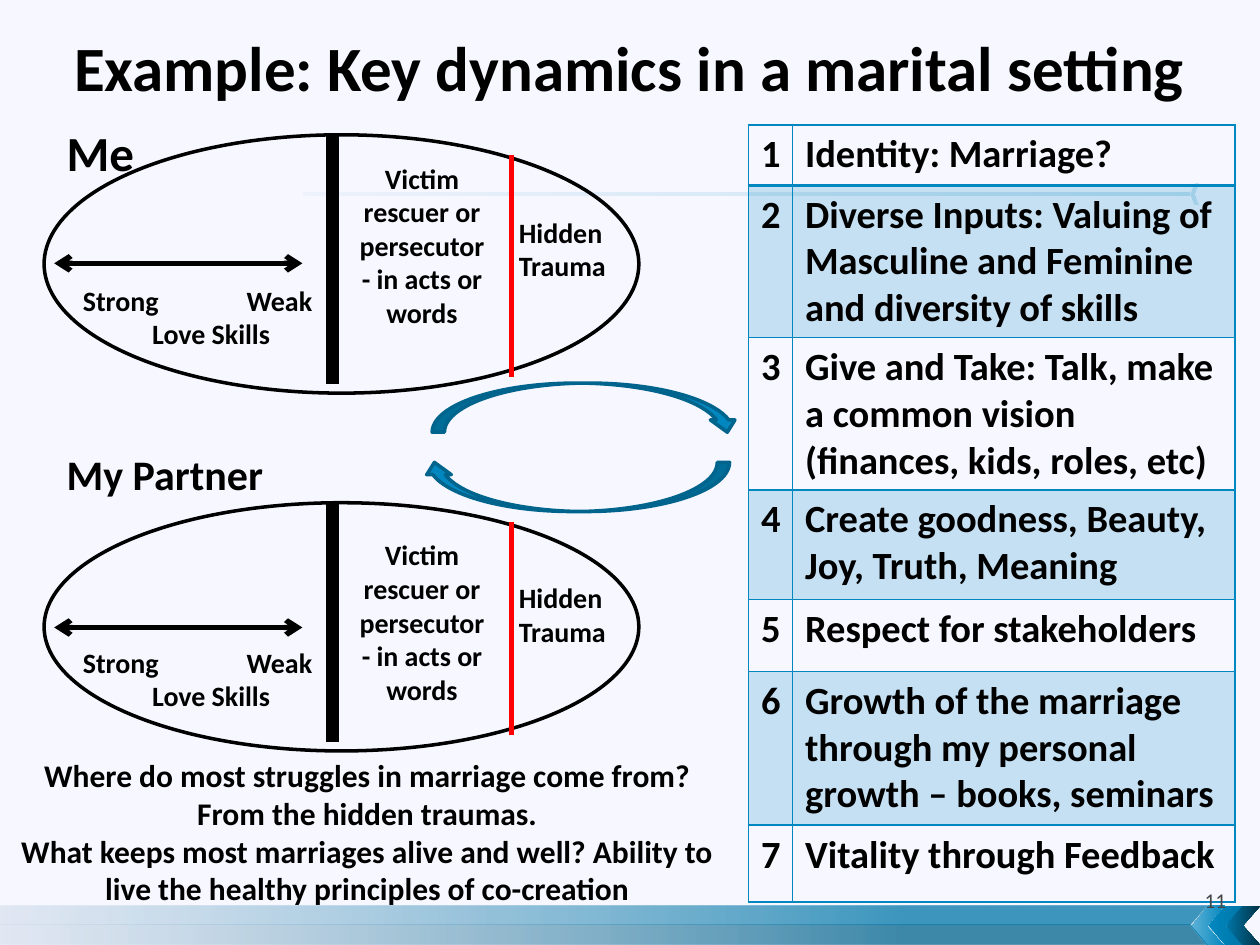
"""Build a slide on the key dynamics in a marital setting."""
from lxml.etree import SubElement
from pptx import Presentation
from pptx.dml.color import RGBColor
from pptx.enum.shapes import MSO_CONNECTOR, MSO_SHAPE
from pptx.enum.text import MSO_ANCHOR, PP_ALIGN
from pptx.oxml.ns import qn
from pptx.util import Inches, Pt

COLORS = {"bg": "F7F7FF", "text": "000000", "number": "454545", "blue": "0087BF",
          "mid": "0077A9", "deep": "00648D", "navy": "003246", "pale": "CCD9E8",
          "red": "FF0000"}
FONT = "Calibri"
TITLE = "Example: Key dynamics in a marital setting"
PRINCIPLES = [
    ("Identity: Marriage?", 0.48),
    ("Diverse Inputs: Valuing of Masculine and Feminine and diversity of skills", 1.21),
    ("Give and Take: Talk, make a common vision (finances, kids, roles, etc)", 1.21),
    ("Create goodness, Beauty, Joy, Truth, Meaning", 0.87),
    ("Respect for stakeholders", 0.57),
    ("Growth of the marriage through my personal growth – books, seminars", 1.22),
    ("Vitality through Feedback", 0.61),
]
TABLE_LEFT, TABLE_TOP, TABLE_COLS = 5.94, 0.99, (0.35, 3.51)
ROLES = ["Victim rescuer or persecutor", "- in acts or words"]
TRAUMA = ["Hidden Trauma"]
SKILLS = ["Strong\tWeak", "Love Skills"]
PEOPLE = [
    {"name": "Me", "size": 28, "label": (0.43, 0.92, 0.74, 0.57), "top": 1.07,
     "height": 2.05, "roles_top": 1.23},
    {"name": "My Partner", "size": 24, "label": (0.43, 3.51, 2.05, 0.5), "top": 3.99,
     "height": 1.97, "roles_top": 4.22},
]
QUESTIONS = [
    "Where do most struggles in marriage come from? From the hidden traumas.",
    "What keeps most marriages alive and well? Ability to live the healthy "
    "principles of co-creation",
]
EXCHANGE = [((3.35, 3.67, 2.44, 0.39), 180), ((3.43, 3.04, 2.44, 0.39), 0)]
FOOTER_BARS = [(7.5, "deep"), (7.19, "mid")]
FOOTER_MIDDLE = 7.34
CHEVRONS = [
    ((9.45, 7.19, 0.27, 0.31), [(0, "blue", 60), (100, "blue", 100)]),
    ((9.59, 7.19, 0.27, 0.31), [(0, "blue", 100), (100, "mid", 100)]),
    ((9.73, 7.19, 0.27, 0.31), [(0, "mid", 100), (100, "navy", 100)]),
    ((9.45, 1.46, 0.06, 0.16), [(0, "blue", 20), (100, "blue", 15)]),
]
RULE = ((2.41, 1.53, 7.03, 0.02), [(0, "blue", 20), (100, "blue", 4)])


def rgb(name):
    return RGBColor.from_string(COLORS[name])


def box(at):
    return [Inches(v) for v in at]


def set_alpha(clr, percent):
    SubElement(clr, qn("a:alpha"), val=str(percent * 1000))


def fill_gradient(sp, stops):
    sp.shadow.inherit = False
    sp.line.fill.background()
    sp.fill.gradient()
    sp.fill.gradient_angle = 180
    for stop, (position, color, _) in zip(sp.fill.gradient_stops, stops):
        stop.position = position / 100
        stop.color.rgb = rgb(color)
    for clr, (_, _, percent) in zip(sp._element.spPr.iter(qn("a:srgbClr")), stops):
        set_alpha(clr, percent)


def write(tf, lines, size, align=PP_ALIGN.LEFT, bold=True, color="text"):
    for i, line in enumerate(lines):
        p = tf.paragraphs[0] if i == 0 else tf.add_paragraph()
        p.alignment = align
        r = p.add_run()
        r.text = line
        for key, value in {"name": FONT, "size": Pt(size), "bold": bold}.items():
            setattr(r.font, key, value)
        r.font.color.rgb = rgb(color)


def add_text(s, at, lines, size, wrap=True, anchor=MSO_ANCHOR.TOP, **look):
    tf = s.shapes.add_textbox(*box(at)).text_frame
    tf.word_wrap = wrap
    tf.vertical_anchor = anchor
    write(tf, lines, size, **look)
    return tf


def add_line(s, x1, y1, x2, y2, color, width, arrows=False):
    cx = s.shapes.add_connector(MSO_CONNECTOR.STRAIGHT, *box((x1, y1, x2, y2)))
    cx.line.color.rgb = rgb(color)
    cx.line.width = Pt(width)
    if arrows:
        for tag in ("a:headEnd", "a:tailEnd"):
            SubElement(cx.line._get_or_add_ln(), qn(tag), type="arrow")
    SubElement(cx._element.spPr, qn("a:effectLst"))


def add_shape(s, kind, at, line, fill=None):
    sp = s.shapes.add_shape(kind, *box(at))
    sp.shadow.inherit = False
    sp.line.color.rgb = rgb(line)
    sp.line.width = Pt(2)
    if fill:
        sp.fill.solid()
        sp.fill.fore_color.rgb = rgb(fill)
    else:
        sp.fill.background()
    return sp


def add_decoration(s):
    for edge, color in FOOTER_BARS:
        fb = s.shapes.build_freeform(Inches(9.58), Inches(edge))
        fb.add_line_segments([box(pt) for pt in
                              ((0, edge), (0, FOOTER_MIDDLE), (9.44, FOOTER_MIDDLE))])
        fill_gradient(fb.convert_to_shape(), [(25, color, 75), (100, "pale", 50)])
    for at, stops in CHEVRONS:
        sp = s.shapes.add_shape(MSO_SHAPE.CHEVRON, *box(at))
        sp.rotation = 180
        fill_gradient(sp, stops)
    at, stops = RULE
    fill_gradient(s.shapes.add_shape(MSO_SHAPE.RECTANGLE, *box(at)), stops)


def add_border(cell, side, width):
    ln = SubElement(cell._tc.get_or_add_tcPr(), qn(f"a:ln{side}"), w=str(Pt(width)))
    SubElement(SubElement(ln, qn("a:solidFill")), qn("a:srgbClr"), val=COLORS["blue"])


def add_table(s):
    heights = [height for _, height in PRINCIPLES]
    at = (TABLE_LEFT, TABLE_TOP, sum(TABLE_COLS), sum(heights))
    tbl = s.shapes.add_table(len(PRINCIPLES), 2, *box(at)).table
    tbl.first_row = tbl.horz_banding = False
    for col, width in zip(tbl.columns, TABLE_COLS):
        col.width = Inches(width)
    for i, (principle, height) in enumerate(PRINCIPLES):
        tbl.rows[i].height = Inches(height)
        entries = ((str(i + 1), PP_ALIGN.CENTER), (principle, PP_ALIGN.LEFT))
        for j, (entry, align) in enumerate(entries):
            cell = tbl.cell(i, j)
            write(cell.text_frame, [entry], 22, align)
            for side in "LRTB":
                heavy = (i, side) in ((0, "B"), (1, "T"))
                add_border(cell, side, 2 if heavy else 1)
            if i % 2:
                cell.fill.solid()
                cell.fill.fore_color.rgb = rgb("blue")
                fill = cell._tc.tcPr.find(qn("a:solidFill"))
                set_alpha(fill.find(qn("a:srgbClr")), 20)
            else:
                cell.fill.background()


def add_person(s, person):
    top, height = person["top"], person["height"]

    def y(share):
        return round(top + share * height, 2)

    add_shape(s, MSO_SHAPE.OVAL, (0.35, top, 4.72, height), "text")
    add_line(s, 2.64, top, 2.64, y(0.965), "text", 7)
    add_line(s, 4.06, y(0.077), 4.06, y(0.935), "red", 3)
    add_text(s, (4.02, y(0.287), 0.9, 0.59), TRAUMA, 16)
    add_text(s, (2.72, person["roles_top"], 1.26, 1.45), ROLES, 16,
             align=PP_ALIGN.CENTER)
    add_line(s, 0.43, y(0.5), 2.4, y(0.5), "text", 3, arrows=True)
    tf = add_text(s, (0.56, y(0.55), 2.04, 0.59), SKILLS, 16)
    ends, caption = (p._p.get_or_add_pPr() for p in tf.paragraphs)
    tabs = SubElement(ends, qn("a:tabLst"))
    SubElement(tabs, qn("a:tab"), pos=str(Inches(1.3)), algn="l")
    caption.set("marL", str(Inches(0.55)))


def main():
    prs = Presentation()
    prs.slide_width, prs.slide_height = Inches(10), Inches(7.5)
    s = prs.slides.add_slide(prs.slide_layouts[6])
    s.background.fill.solid()
    s.background.fill.fore_color.rgb = rgb("bg")
    centre = PP_ALIGN.CENTER
    add_decoration(s)
    add_text(s, (0.35, 0.13, 9.29, 0.79), [TITLE], 36, anchor=MSO_ANCHOR.MIDDLE,
             align=centre)
    add_table(s)
    add_text(s, (9.29, 6.98, 0.71, 0.33), ["11"], 12, anchor=MSO_ANCHOR.MIDDLE,
             align=centre, bold=False, color="number")
    for person in PEOPLE:
        add_person(s, person)
    for at, rotation in EXCHANGE:
        sp = add_shape(s, MSO_SHAPE.CURVED_DOWN_ARROW, at, "deep", "blue")
        sp.rotation = rotation
    for person in PEOPLE:
        add_text(s, person["label"], [person["name"]], person["size"], wrap=False)
    add_text(s, (0, 5.95, 5.83, 1.31), QUESTIONS, 18, align=centre)
    prs.save("out.pptx")


if __name__ == "__main__":
    main()
